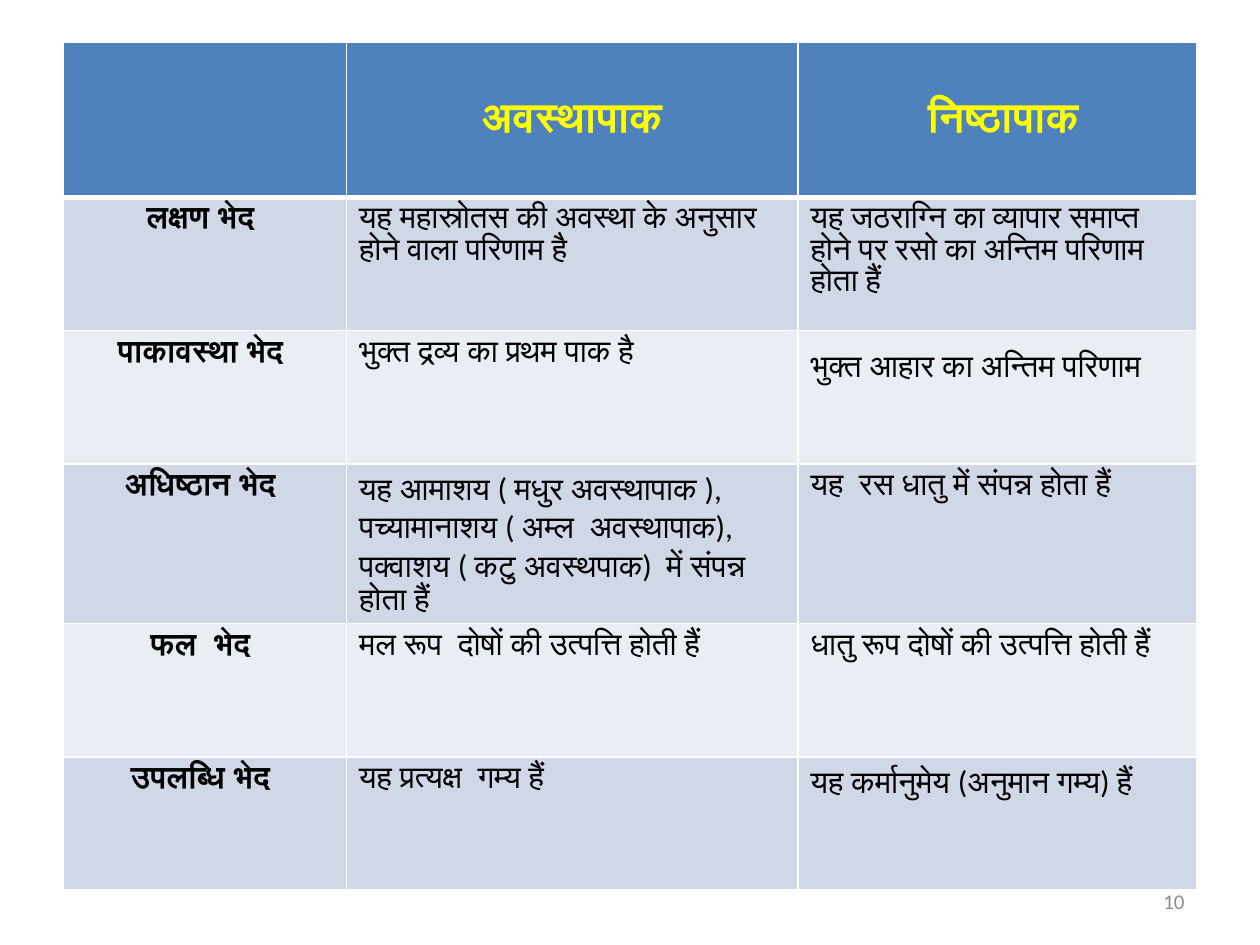
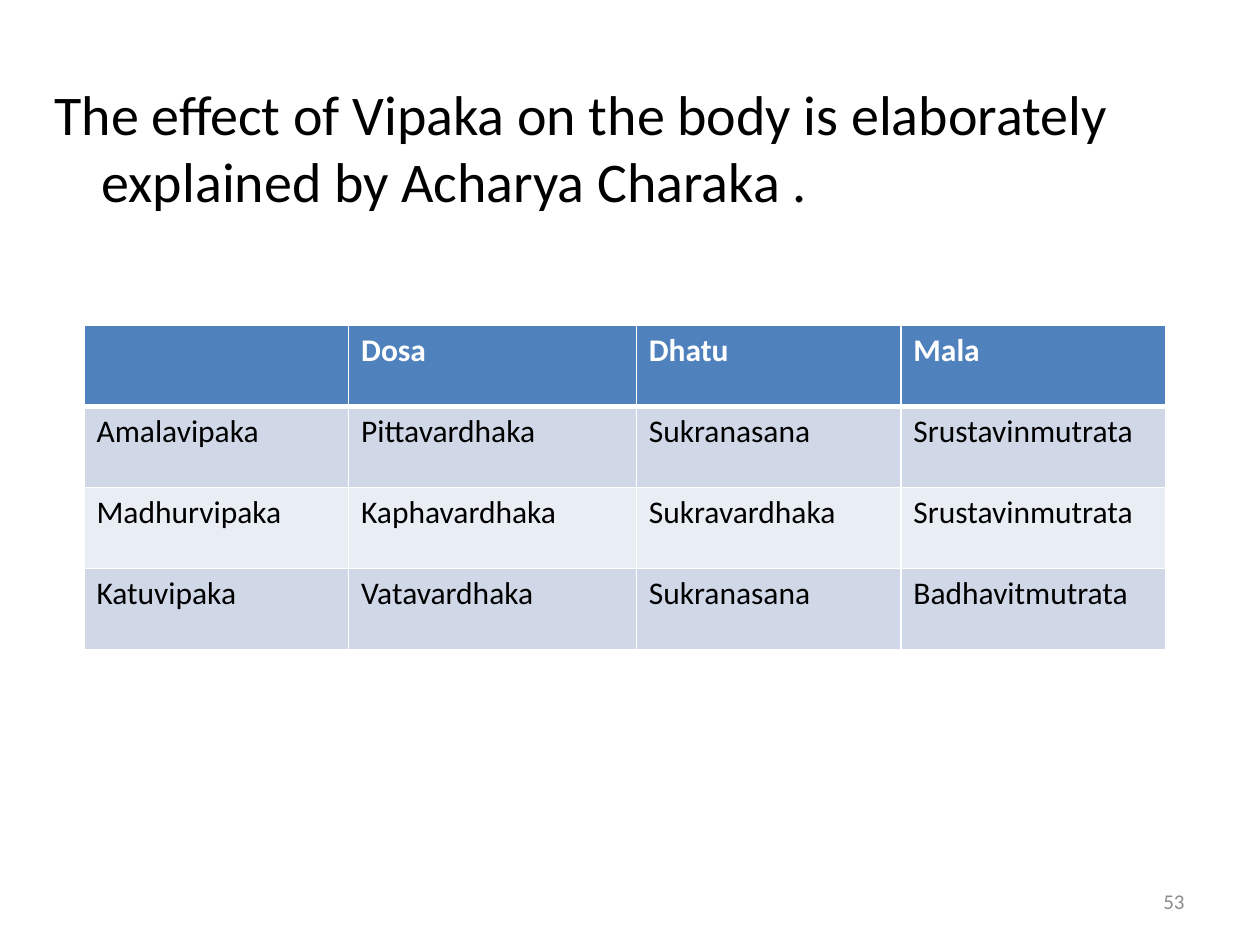
import pptx
import pptx.dml.color
import pptx.enum.text
import pptx.oxml.ns
import pptx.util
from lxml import etree

ALIGN = pptx.enum.text.PP_ALIGN
ANCHOR = pptx.enum.text.MSO_ANCHOR

COLORS = {
    "header": "4F81BD", "odd_row": "D0D8E8", "even_row": "E9EDF4",
    "border": "FFFFFF", "text": "000000", "white": "FFFFFF",
    "yellow": "FFFF00", "page_number": "8C8C8C",
}
FONT = "Calibri"
SLIDE_SIZE = (120, 90)  # grid units, twelve to the inch
PAGE_NUMBER_BOX = (86, 83.4, 28, 4.8)

PAKA_TABLE = {
    "at": (6, 4),
    "columns": [27, 43, 38],
    "rows": [14.8, 12.7, 12.7, 15.1, 12.7, 12.7],
    "cells": [
        ["", "अवस्थापाक", " निष्ठापाक"],
        ["लक्षण भेद ", "यह महास्रोतस की अवस्था के अनुसार होने वाला परिणाम है",
         "यह जठराग्नि का व्यापार समाप्त होने पर रसो का अन्तिम परिणाम होता हैं"],
        ["पाकावस्था भेद ", "भुक्त द्रव्य का प्रथम पाक है", "भुक्त आहार का अन्तिम परिणाम"],
        ["अधिष्ठान भेद ",
         "यह आमाशय ( मधुर अवस्थापाक ), पच्यामानाशय ( अम्ल  अवस्थापाक), "
         "पक्वाशय ( कटु अवस्थपाक)  में संपन्न होता हैं",
         "यह  रस धातु में संपन्न होता हैं"],
        ["फल  भेद ", "मल रूप  दोषों की उत्पत्ति होती हैं", "धातु रूप दोषों की उत्पत्ति होती हैं"],
        ["उपलब्धि भेद ", "यह प्रत्यक्ष  गम्य हैं", "यह कर्मानुमेय (अनुमान गम्य) हैं"],
    ],
    "header_style": {"size": 24, "bold": True, "color": "yellow", "alignment": ALIGN.CENTER},
    "label_style": {"bold": True, "alignment": ALIGN.CENTER},
    "header_anchor": ANCHOR.MIDDLE,
    "spaced_cells": {(2, 2): 1.5},
}
VIPAKA_TABLE = {
    "at": (8, 31),
    "columns": [25.2, 27.4, 25.2, 25.2],
    "rows": [7.72] * 4,
    "cells": [
        ["", "Dosa", "Dhatu", "Mala"],
        ["Amalavipaka", "Pittavardhaka", "Sukranasana", "Srustavinmutrata"],
        ["Madhurvipaka", "Kaphavardhaka", "Sukravardhaka", "Srustavinmutrata"],
        ["Katuvipaka", "Vatavardhaka", "Sukranasana", "Badhavitmutrata"],
    ],
    "header_style": {"bold": True, "color": "white"},
    "label_style": {},
    "header_anchor": ANCHOR.TOP,
    "spaced_cells": {},
}
STATEMENT = "The effect of Vipaka on the body is elaborately explained by Acharya Charaka ."
STATEMENT_BOX = (4, 7, 110, 73.4)
SLIDES = [
    {"number": "10", "table": PAKA_TABLE},
    {"number": "53", "table": VIPAKA_TABLE, "statement": STATEMENT},
]


def units(value):
    return pptx.util.Inches(value / 12)


def rgb(name):
    return pptx.dml.color.RGBColor.from_string(COLORS[name])


def write(text_frame, text, size=18, bold=False, color="text", alignment=ALIGN.LEFT):
    paragraph = text_frame.paragraphs[0]
    paragraph.alignment = alignment
    run = paragraph.add_run()
    run.text = text
    font_values = {"name": FONT, "size": pptx.util.Pt(size), "bold": bold}
    for attribute, value in font_values.items():
        setattr(run.font, attribute, value)
    run.font.color.rgb = rgb(color)
    return paragraph


def add_text(slide, box, text, anchor=ANCHOR.TOP, **style):
    shape = slide.shapes.add_textbox(*map(units, box))
    shape.text_frame.word_wrap = True
    shape.text_frame.vertical_anchor = anchor
    return write(shape.text_frame, text, **style)


def add_borders(cell, row):
    """Draw thin cell borders, with a thick line under the header row."""
    thick_side = {0: "B", 1: "T"}.get(row)
    properties = cell._tc.get_or_add_tcPr()
    for side in "LRTB":
        width = pptx.util.Pt(3 if side == thick_side else 1)
        line = etree.SubElement(properties, pptx.oxml.ns.qn(f"a:ln{side}"), w=str(int(width)))
        fill = etree.SubElement(line, pptx.oxml.ns.qn("a:solidFill"))
        etree.SubElement(fill, pptx.oxml.ns.qn("a:srgbClr"), val=COLORS["border"])


def add_table(slide, content):
    columns, rows = content["columns"], content["rows"]
    box = (*content["at"], sum(columns), sum(rows))
    table = slide.shapes.add_table(len(rows), len(columns), *map(units, box)).table
    for column, width in zip(table.columns, columns):
        column.width = units(width)
    for row, height in zip(table.rows, rows):
        row.height = units(height)

    for row, texts in enumerate(content["cells"]):
        fill = "header" if row == 0 else "odd_row" if row % 2 else "even_row"
        for column, text in enumerate(texts):
            cell = table.cell(row, column)
            add_borders(cell, row)
            cell.fill.solid()
            cell.fill.fore_color.rgb = rgb(fill)
            style = {}
            if row == 0:
                style = content["header_style"]
                cell.vertical_anchor = content["header_anchor"]
            elif column == 0:
                style = content["label_style"]
            if text:
                paragraph = write(cell.text_frame, text, **style)
                paragraph.line_spacing = content["spaced_cells"].get((row, column))


def add_statement(slide, text):
    paragraph = add_text(slide, STATEMENT_BOX, text, size=32)
    properties = paragraph._p.get_or_add_pPr()
    indent = int(units(4.5))
    properties.set("marL", str(indent))
    properties.set("indent", str(-indent))


def main():
    presentation = pptx.Presentation()
    presentation.slide_width, presentation.slide_height = map(units, SLIDE_SIZE)
    for content in SLIDES:
        slide = presentation.slides.add_slide(presentation.slide_layouts[6])
        if "statement" in content:
            add_statement(slide, content["statement"])
        add_table(slide, content["table"])
        add_text(slide, PAGE_NUMBER_BOX, content["number"], anchor=ANCHOR.MIDDLE,
                 size=12, color="page_number", alignment=ALIGN.RIGHT)
    presentation.save("out.pptx")


if __name__ == "__main__":
    main()
